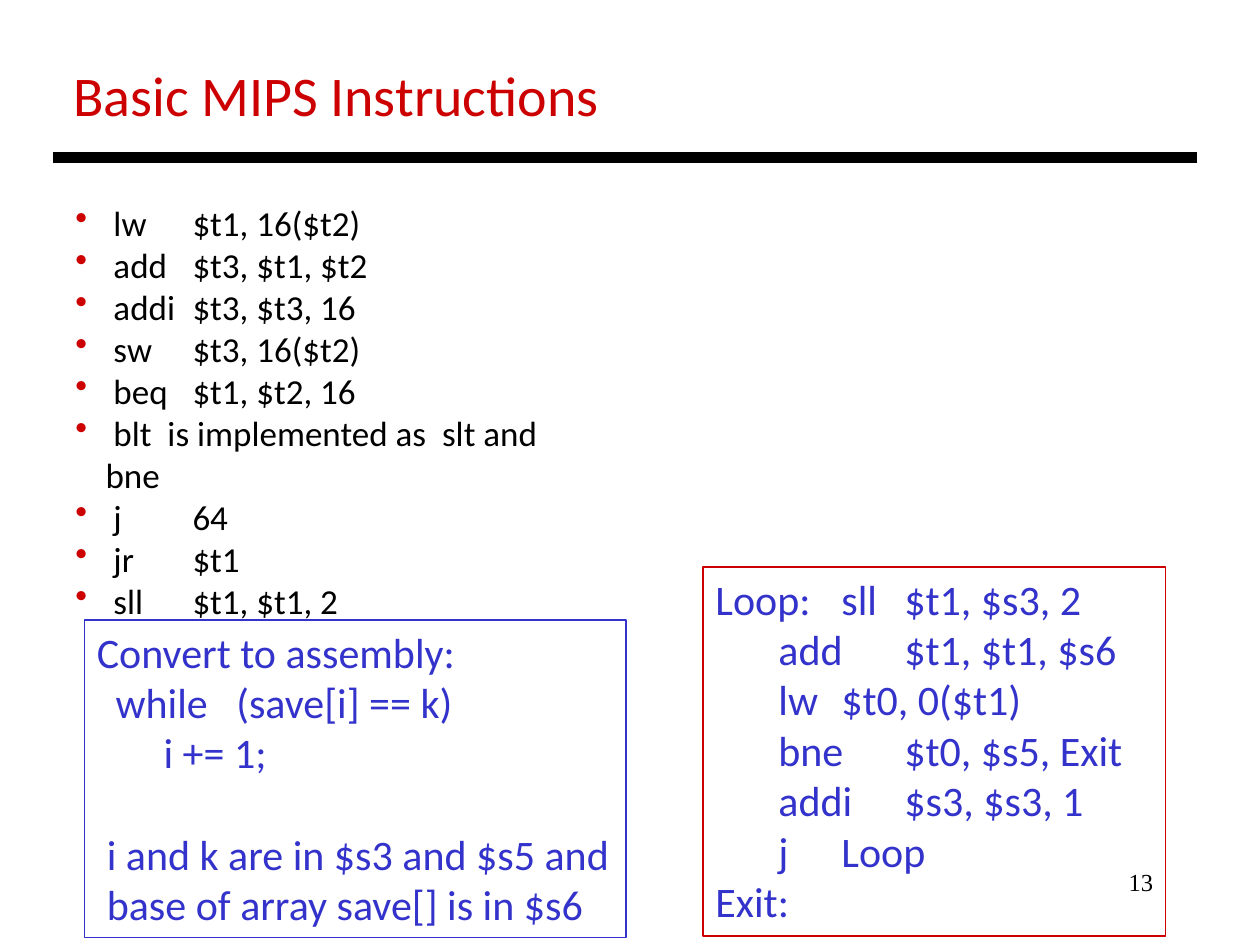
from lxml.etree import SubElement
from pptx import Presentation
from pptx.dml.color import RGBColor
from pptx.enum.shapes import MSO_CONNECTOR, MSO_SHAPE
from pptx.enum.text import MSO_ANCHOR, PP_ALIGN
from pptx.oxml.ns import qn
from pptx.util import Inches, Pt

BLACK = RGBColor(0x00, 0x00, 0x00)
RED = RGBColor(0xCC, 0x00, 0x00)
BLUE = RGBColor(0x33, 0x33, 0xCC)

INSTRUCTIONS = [
    " lw\t$t1, 16($t2)",
    " add\t$t3, $t1, $t2",
    " addi\t$t3, $t3, 16",
    " sw\t$t3, 16($t2)",
    " beq\t$t1, $t2, 16",
    " blt  is implemented as  slt and bne",
    " j\t64",
    " jr\t$t1",
    " sll\t$t1, $t1, 2",
]
# text, left indent in inches, space before in points
EXERCISE = [
    ("Convert to assembly:", 0, 0),
    ("while   (save[i] == k)", 0.15, 0),
    ("i += 1;", 0.53, 0),
    ("i and k are in $s3 and $s5 and", 0.08, 29),
    ("base of array save[] is in $s6", 0.08, 0),
]
ANSWER = [
    "Loop:\tsll\t$t1, $s3, 2",
    "\tadd\t$t1, $t1, $s6",
    "\tlw\t$t0, 0($t1)",
    "\tbne\t$t0, $s5, Exit",
    "\taddi\t$s3, $s3, 1",
    "\tj\tLoop",
    "Exit:",
]


class SlideBuilder:
    def __init__(self, page, font="Calibri"):
        self.page = page
        self.font = font

    def add_span(self, para, text, size, color, font=None):
        span = para.add_run()
        span.text = text
        span.font.name = font or self.font
        span.font.size = Pt(size)
        span.font.color.rgb = color

    def set_indent(self, para, left, hanging=0, bullet_color=None, tabs=()):
        """Set indents in inches, then an optional bullet and tab stops."""
        properties = para._p.get_or_add_pPr()
        properties.set("marL", str(Inches(left)))
        properties.set("indent", str(-Inches(hanging)))
        if bullet_color is not None:
            color = SubElement(properties, qn("a:buClr"))
            SubElement(color, qn("a:srgbClr"), val=str(bullet_color))
            SubElement(properties, qn("a:buChar"), char="•")
        if tabs:
            stops = SubElement(properties, qn("a:tabLst"))
            for stop in tabs:
                SubElement(stops, qn("a:tab"), pos=str(Inches(stop)), algn="l")

    def paragraphs(self, frame, count):
        for number in range(count):
            yield frame.add_paragraph() if number else frame.paragraphs[0]

    def title(self, text, left, top, width, height):
        box = self.page.shapes.title
        box.left, box.top = Inches(left), Inches(top)
        box.width, box.height = Inches(width), Inches(height)
        box.text_frame.vertical_anchor = MSO_ANCHOR.TOP
        para = box.text_frame.paragraphs[0]
        para.alignment = PP_ALIGN.LEFT
        self.add_span(para, text, 32, RED)

    def rule(self, left, right, top):
        line = self.page.shapes.add_connector(
            MSO_CONNECTOR.STRAIGHT, Inches(left), Inches(top), Inches(right), Inches(top))
        line.line.color.rgb = BLACK
        line.line.width = Pt(6)
        SubElement(line._element.spPr, qn("a:effectLst"))

    def text_box(self, left, top, width, height):
        box = self.page.shapes.add_textbox(
            Inches(left), Inches(top), Inches(width), Inches(height))
        box.text_frame.word_wrap = True
        return box.text_frame

    def outlined_box(self, left, top, width, height, color):
        box = self.page.shapes.add_shape(
            MSO_SHAPE.RECTANGLE, Inches(left), Inches(top), Inches(width), Inches(height))
        box.shadow.inherit = False
        box.fill.background()
        box.line.color.rgb = color
        box.line.width = Pt(0.75)
        box.text_frame.word_wrap = True
        box.text_frame.vertical_anchor = MSO_ANCHOR.TOP
        return box.text_frame

    def bullet_list(self, frame, lines):
        for para, text in zip(self.paragraphs(frame, len(lines)), lines):
            self.set_indent(para, 0.24, 0.24, RED, tabs=[0.93])
            self.add_span(para, text, 20, BLACK)

    def indented_lines(self, frame, lines):
        for para, (text, indent, gap) in zip(self.paragraphs(frame, len(lines)), lines):
            para.alignment = PP_ALIGN.LEFT
            para.space_before = Pt(gap)
            self.set_indent(para, indent)
            self.add_span(para, text, 24, BLUE)

    def code_columns(self, frame, lines, tabs):
        for para, text in zip(self.paragraphs(frame, len(lines)), lines):
            para.alignment = PP_ALIGN.LEFT
            self.set_indent(para, 0, tabs=tabs)
            self.add_span(para, text, 24, BLUE)

    def page_number(self, text, left, top, width, height):
        para = self.text_box(left, top, width, height).paragraphs[0]
        para.alignment = PP_ALIGN.RIGHT
        self.add_span(para, text, 14, BLACK, "Times New Roman")


def main():
    deck = Presentation()
    deck.slide_width, deck.slide_height = Inches(10), Inches(7.5)
    builder = SlideBuilder(deck.slides.add_slide(deck.slide_layouts[5]))
    builder.page_number("13", 7.17, 6.83, 2.08, 0.5)
    builder.title("Basic MIPS Instructions", 0.48, 0.43, 4.43, 0.64)
    builder.rule(0.42, 9.5, 1.25)
    builder.bullet_list(builder.text_box(0.5, 1.55, 4.3, 3.13), INSTRUCTIONS)
    builder.indented_lines(builder.outlined_box(0.67, 4.92, 4.3, 2.52, BLUE), EXERCISE)
    builder.code_columns(
        builder.outlined_box(5.58, 4.5, 3.67, 2.93, RED), ANSWER, tabs=[0.91, 1.72])
    deck.save("out.pptx")


if __name__ == "__main__":
    main()
